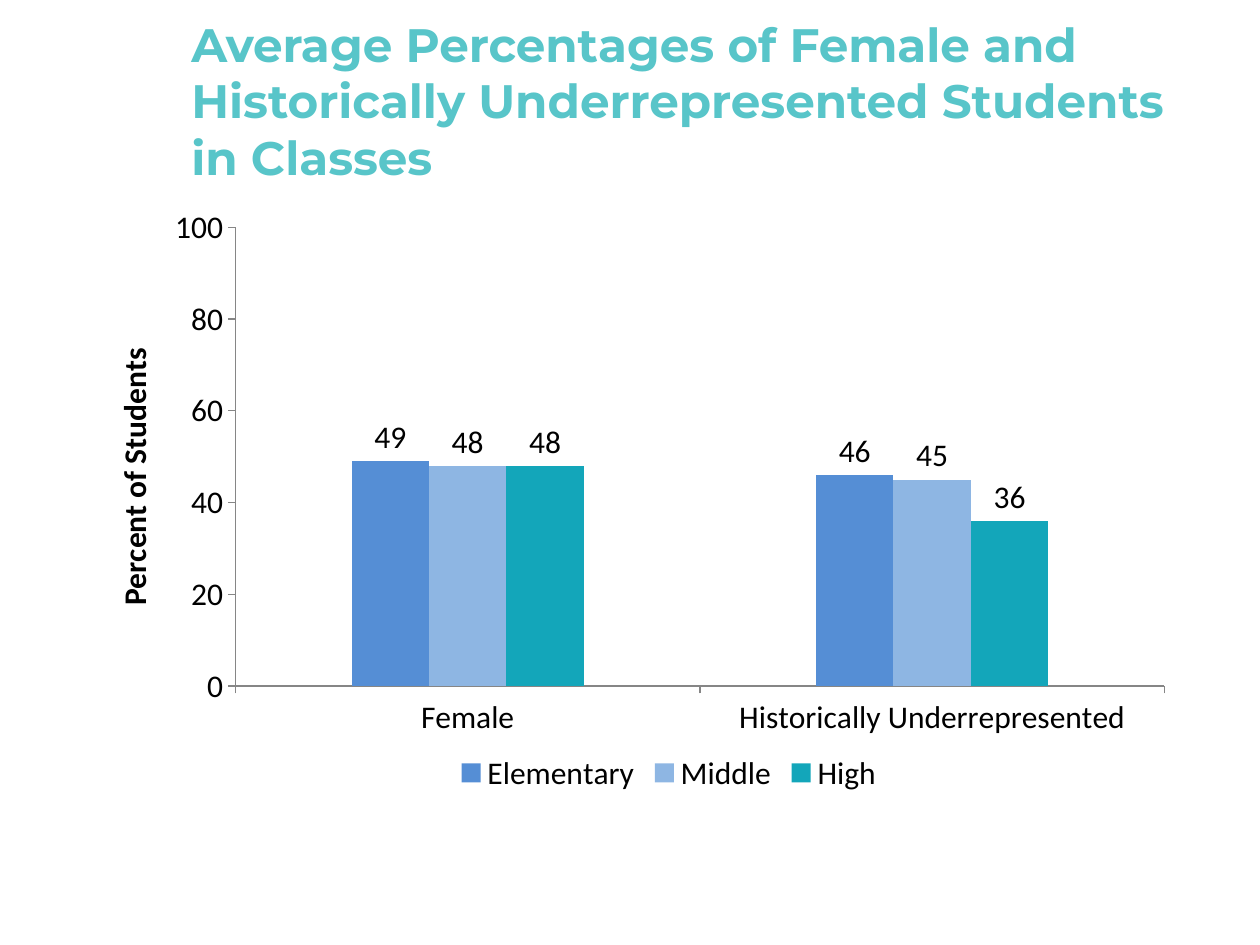
from lxml.etree import SubElement
from pptx import Presentation
from pptx.chart.data import CategoryChartData
from pptx.dml.color import RGBColor
from pptx.enum.chart import XL_CHART_TYPE, XL_LABEL_POSITION, XL_LEGEND_POSITION, XL_TICK_MARK
from pptx.enum.text import MSO_ANCHOR
from pptx.oxml.ns import qn
from pptx.util import Inches, Pt

TITLE_TEAL = RGBColor(0x58, 0xC5, 0xC9)
BLACK = RGBColor(0, 0, 0)
AXIS_GRAY = RGBColor(0x86, 0x86, 0x86)
SERIES = [
    ("Elementary", (49, 46), RGBColor(0x55, 0x8E, 0xD5)),
    ("Middle", (48, 45), RGBColor(0x8E, 0xB6, 0xE3)),
    ("High", (48, 36), RGBColor(0x13, 0xA6, 0xBA)),
]


def set_layout(parent, index, **fractions):
    """Place a chart part by fractions of the chart's size."""
    for old_layout in parent.findall(qn("c:layout")):
        parent.remove(old_layout)
    layout = SubElement(parent, qn("c:layout"))
    parent.insert(index, layout)
    manual = SubElement(layout, qn("c:manualLayout"))
    if "w" in fractions:
        SubElement(manual, qn("c:layoutTarget")).set("val", "inner")
    for key in ("x", "y"):
        SubElement(manual, qn(f"c:{key}Mode")).set("val", "edge")
    for key, value in fractions.items():
        SubElement(manual, qn(f"c:{key}")).set("val", str(value))


presentation = Presentation()
presentation.slide_width = Inches(10)
presentation.slide_height = Inches(7.5)
slide = presentation.slides.add_slide(presentation.slide_layouts[6])

# Clustered column chart
chart_data = CategoryChartData()
chart_data.categories = ["Female", "Historically Underrepresented"]
for name, values, color in SERIES:
    chart_data.add_series(name, values)
chart = slide.shapes.add_chart(
    XL_CHART_TYPE.COLUMN_CLUSTERED,
    Inches(0.58), Inches(1.55), Inches(8.83), Inches(4.87), chart_data,
).chart
chart.has_title = False
chart.font.name = "Calibri"
chart.font.size = Pt(18)
chart.font.color.rgb = BLACK

# Columns and their value labels
plot = chart.plots[0]
plot.gap_width = 300
plot.overlap = 0
plot.vary_by_categories = False
for series, (name, values, color) in zip(plot.series, SERIES):
    series.format.fill.solid()
    series.format.fill.fore_color.rgb = color
    series.data_labels.show_value = True
    series.data_labels.position = XL_LABEL_POSITION.OUTSIDE_END

# Axes
for axis in (chart.category_axis, chart.value_axis):
    axis.has_major_gridlines = False
    axis.major_tick_mark = XL_TICK_MARK.OUTSIDE
    axis.minor_tick_mark = XL_TICK_MARK.NONE
    axis.format.line.color.rgb = AXIS_GRAY
    axis.format.line.width = Pt(0.75)
value_axis = chart.value_axis
value_axis.minimum_scale = 0
value_axis.maximum_scale = 100
value_axis.major_unit = 20
axis_title = value_axis.axis_title
axis_title.text_frame.text = "Percent of Students"
axis_font = axis_title.text_frame.paragraphs[0].runs[0].font
axis_font.name = "Calibri"
axis_font.size = Pt(18)
axis_font.bold = True
axis_font.color.rgb = BLACK

# Legend
chart.has_legend = True
chart.legend.position = XL_LEGEND_POSITION.BOTTOM
chart.legend.include_in_layout = False

# Places of the chart parts
set_layout(chart.element.xpath(".//c:plotArea")[0], 0, x=0.146, y=0.052, w=0.835, h=0.748)
set_layout(chart.element.xpath(".//c:legend")[0], 1, x=0.34, y=0.9)
set_layout(chart.element.xpath(".//c:valAx/c:title")[0], 1, x=0.03, y=0.24)

# Slide title
title_box = slide.shapes.add_textbox(Inches(1.42), Inches(0.17), Inches(8.25), Inches(1.25))
text_frame = title_box.text_frame
text_frame.word_wrap = True
text_frame.vertical_anchor = MSO_ANCHOR.MIDDLE
text_frame.text = "Average Percentages of Female and Historically Underrepresented Students in Classes"
title_font = text_frame.paragraphs[0].runs[0].font
title_font.name = "Montserrat"
title_font.size = Pt(26.8)
title_font.bold = True
title_font.color.rgb = TITLE_TEAL

presentation.save("out.pptx")
